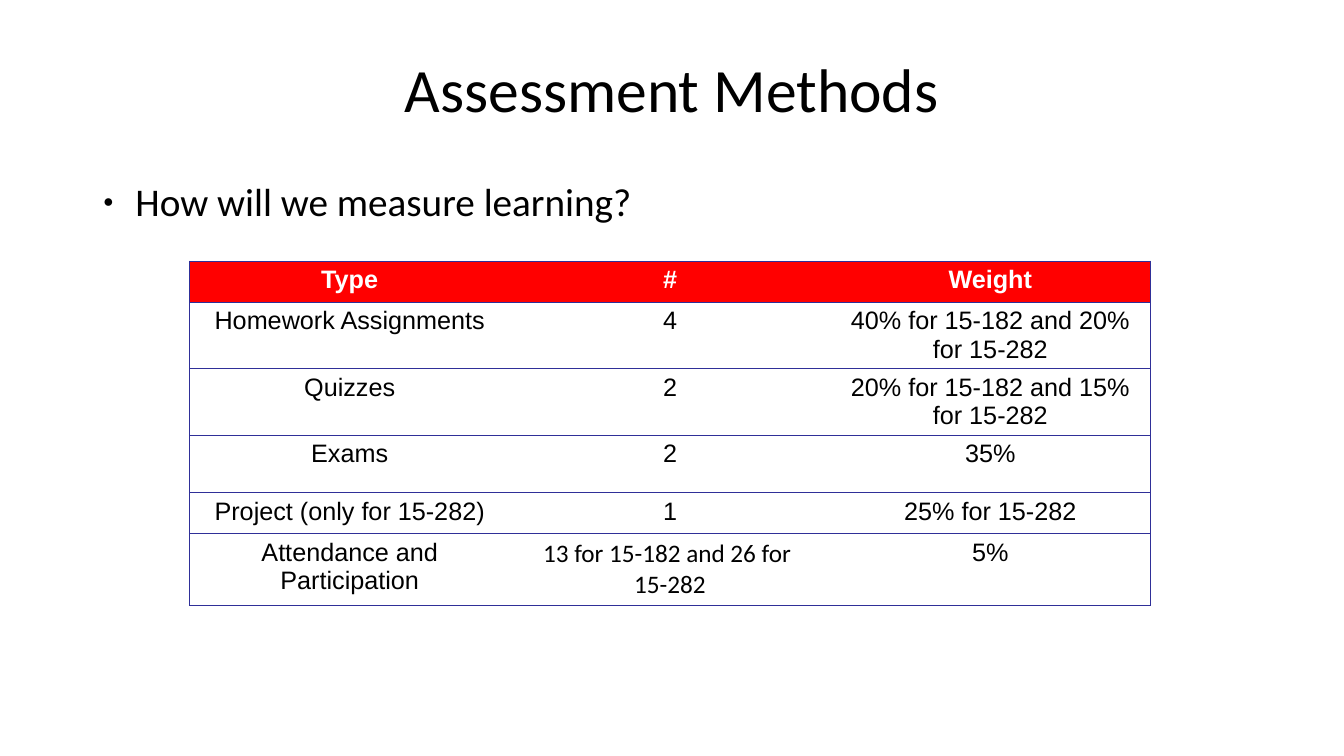
from lxml.etree import SubElement
from pptx import Presentation
from pptx.dml.color import RGBColor
from pptx.enum.text import MSO_ANCHOR as Anchor, MSO_AUTO_SIZE as AutoSize, PP_ALIGN as Align
from pptx.oxml.ns import qn
from pptx.util import Pt

BLACK = RGBColor(0x00, 0x00, 0x00)
WHITE = RGBColor(0xFF, 0xFF, 0xFF)
RED = RGBColor(0xFF, 0x00, 0x00)
BORDER = RGBColor(0x2F, 0x2F, 0x98)

ROWS = [
    ("Type", "#", "Weight"),
    ("Homework Assignments", "4", "40% for 15-182 and 20% for 15-282"),
    ("Quizzes", "2", "20% for 15-182 and 15% for 15-282"),
    ("Exams", "2", "35%"),
    ("Project (only for 15-282)", "1", "25% for 15-282"),
    ("Attendance and Participation", "13 for 15-182 and 26 for \n15-282", "5%"),
]
ROW_HEIGHTS = [29.2, 29.2, 41, 41, 29.2, 41]
ATTENDANCE_COUNT = (5, 1)


def place(shape, box):
    shape.left, shape.top, shape.width, shape.height = (Pt(length) for length in box)


def format_runs(paragraph, size, font_name, color, bold=False):
    for run in paragraph.runs:
        font = run.font
        font.size, font.name, font.bold = Pt(size), font_name, bold
        font.color.rgb = color


def fill_title(title, box):
    place(title, box)
    frame = title.text_frame
    frame.text = "Assessment Methods"
    frame.auto_size = AutoSize.NONE
    frame.vertical_anchor = Anchor.MIDDLE
    paragraph = frame.paragraphs[0]
    paragraph.alignment = Align.CENTER
    paragraph.line_spacing = 0.9
    format_runs(paragraph, 44, "Calibri", BLACK)


def fill_body(body, box):
    place(body, box)
    frame = body.text_frame
    frame.text = "How will we measure learning?"
    frame.auto_size = AutoSize.NONE
    paragraph = frame.paragraphs[0]
    paragraph.line_spacing = 0.9
    paragraph.space_before = Pt(10)
    format_runs(paragraph, 28, "Calibri", BLACK)
    # Small round bullet with a hanging indent
    properties = paragraph._p.get_or_add_pPr()
    properties.set("marL", str(Pt(31)))
    properties.set("indent", str(-Pt(23)))
    SubElement(properties, qn("a:buSzPct"), val="45000")
    SubElement(properties, qn("a:buChar"), char="●")


def set_borders(cell, visible_sides):
    properties = cell._tc.get_or_add_tcPr()
    for side in "LRTB":
        line = SubElement(properties, qn(f"a:ln{side}"), w=str(Pt(0.75)))
        if side in visible_sides:
            fill = SubElement(line, qn("a:solidFill"))
            SubElement(fill, qn("a:srgbClr"), val=str(BORDER))
        else:
            SubElement(line, qn("a:noFill"))


def add_assessment_table(slide, box):
    left, top, width, height = (Pt(length) for length in box)
    column_count = len(ROWS[0])
    table = slide.shapes.add_table(len(ROWS), column_count, left, top, width, height).table
    table.horz_banding = False
    for row, row_height in zip(table.rows, ROW_HEIGHTS):
        row.height = Pt(row_height)

    for row_index, texts in enumerate(ROWS):
        header = row_index == 0
        for column, text in enumerate(texts):
            cell = table.cell(row_index, column)
            # Horizontal rules everywhere, vertical ones only at the outer edges
            left_side = "L" if column == 0 else ""
            right_side = "R" if column == column_count - 1 else ""
            set_borders(cell, "TB" + left_side + right_side)
            if header:
                cell.fill.solid()
                cell.fill.fore_color.rgb = RED
            else:
                cell.fill.background()
            paragraph = cell.text_frame.paragraphs[0]
            paragraph.text = text
            paragraph.alignment = Align.CENTER
            special = (row_index, column) == ATTENDANCE_COUNT
            if special:
                cell.vertical_anchor = Anchor.MIDDLE
            format_runs(paragraph, 18, "Calibri" if special else "Arial",
                        WHITE if header else BLACK, header)


def build_assessment_slide(presentation):
    slide = presentation.slides.add_slide(presentation.slide_layouts[1])
    fill_title(slide.shapes.title, (156, 24.5, 648, 83.5))
    fill_body(slide.placeholders[1], (58.5, 126.5, 747.5, 356.5))
    add_assessment_table(slide, (135.4, 186.5, 686.4, sum(ROW_HEIGHTS)))


def main():
    presentation = Presentation()
    presentation.slide_width, presentation.slide_height = Pt(960), Pt(540)
    build_assessment_slide(presentation)
    presentation.save("out.pptx")


if __name__ == "__main__":
    main()
